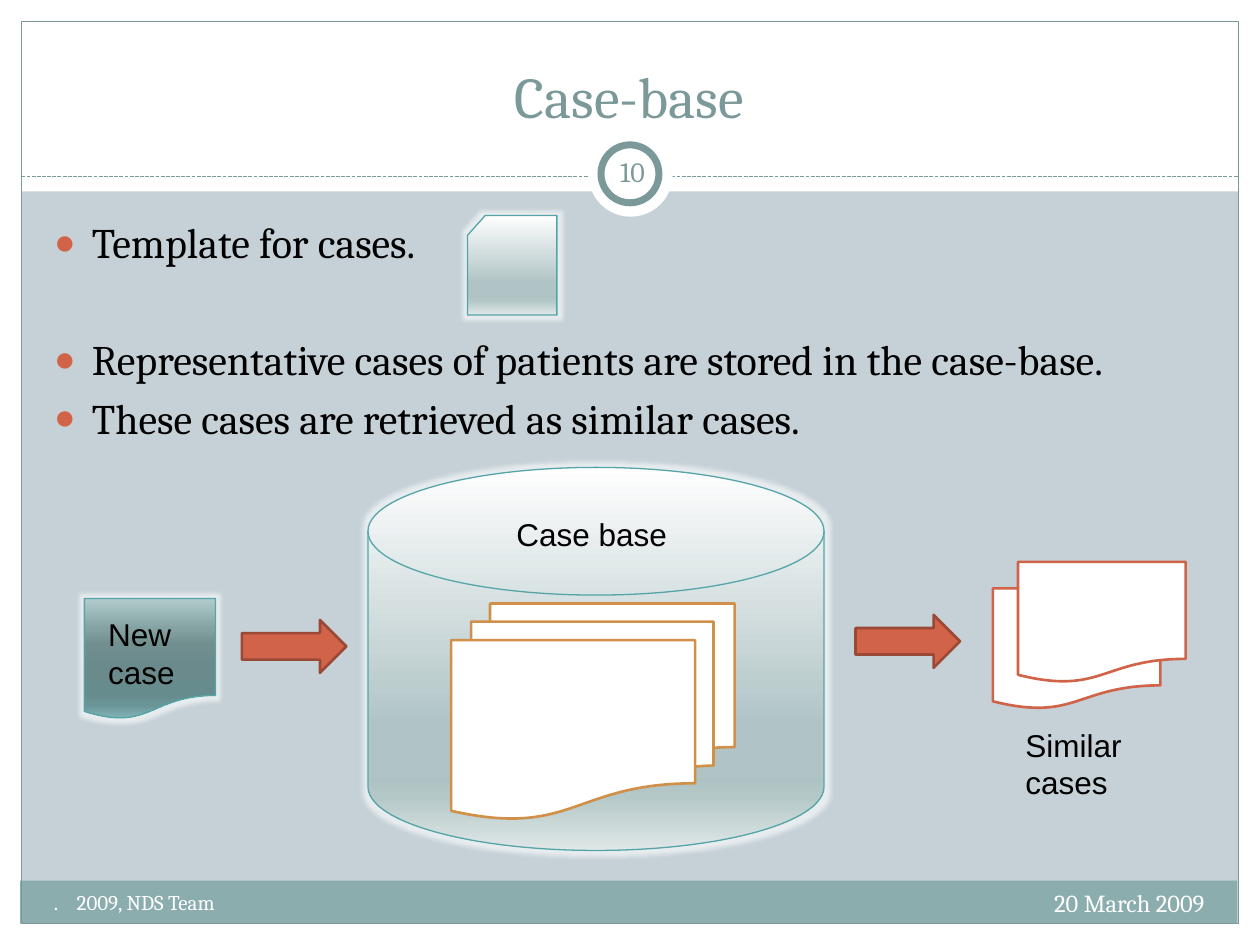
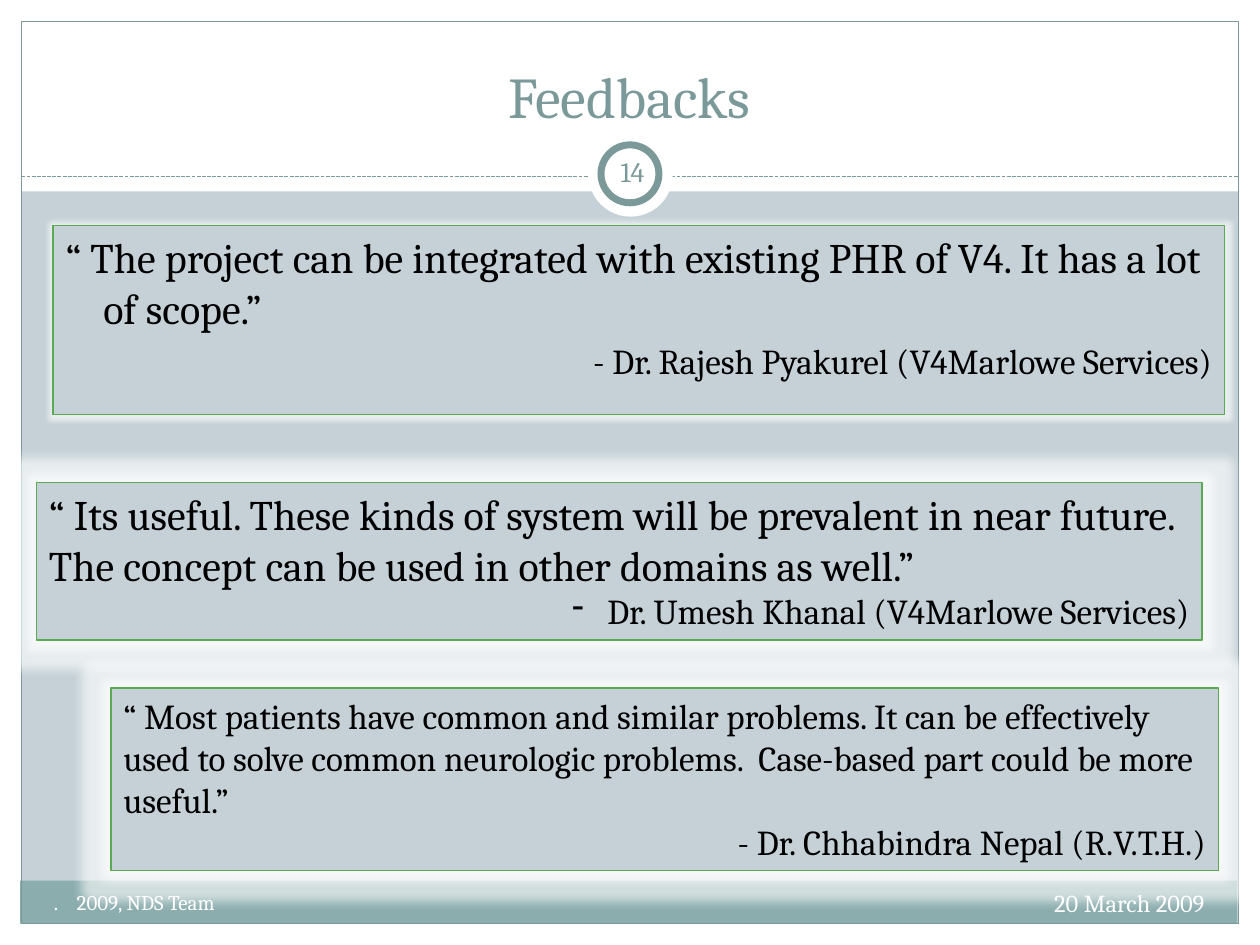
from lxml import etree
from pptx import Presentation
from pptx import util as u
from pptx.dml import color
from pptx.enum import dml, shapes, text
from pptx.oxml import ns

PX = u.Inches(1) // 100  # 100 px to the inch
START = (0, 0, PX, PX)  # every new shape is placed by style()
COLORS = {
    "white": "FFFFFF", "black": "000000", "ground": "C5D1D7", "band": "8CADAE",
    "slate": "7C999A", "rust": "D16349", "brown": "9B4936", "amber": "D19049",
    "teal": "55A4A7", "green": "5AAA53",
}
PALE = [(0, "FEFEFE"), (68, "B0C4C5"), (81, "ADC2C3"), (86, "B5C8C8"), (100, "DFE7E7")]
DARK = [(0, "B0CCCD"), (25, "85A2A2"), (38, "728F90"), (55, "6B8A8B"),
        (80, "678C8D"), (88, "6A9597"), (100, "84B6B8")]
KIND = shapes.MSO_SHAPE
ALIGN = text.PP_ALIGN
ANCHOR = text.MSO_ANCHOR


def style(shape, at, fill=None, line=None, width=0.75, glow=0):
    """Place a shape and set its fill (colour name or gradient stops), line and glow."""
    shape.left, shape.top, shape.width, shape.height = [v * PX for v in at]
    if isinstance(fill, list):
        shape.fill.gradient()
        shape.fill.gradient_angle = 270
        stops = shape.element.find(".//" + ns.qn("a:gsLst"))
        stops.clear()
        for percent, value in fill:
            stop = etree.SubElement(stops, ns.qn("a:gs"), pos=str(percent * 1000))
            etree.SubElement(stop, ns.qn("a:srgbClr"), val=value)
    elif fill:
        shape.fill.solid()
        shape.fill.fore_color.rgb = color.RGBColor.from_string(COLORS[fill])
    else:
        shape.fill.background()
    if line:
        shape.line.color.rgb = color.RGBColor.from_string(COLORS[line])
        shape.line.width = u.Pt(width)
    else:
        shape.line.fill.background()
    shape.shadow.inherit = False
    if glow:
        effects = shape.element.find(".//" + ns.qn("a:effectLst"))
        halo = etree.SubElement(effects, ns.qn("a:glow"), rad=str(u.Pt(glow)))
        tint = etree.SubElement(halo, ns.qn("a:srgbClr"), val=COLORS["white"])
        etree.SubElement(tint, ns.qn("a:alpha"), val="60000")
    return shape


def write(shape, words, size=18, ink="black", font="Cambria", align=ALIGN.LEFT,
          anchor=ANCHOR.TOP, wrap=True, margin=0, indent=0, before=None,
          bullet=None, bullet_ink=None):
    """Add one formatted paragraph to a shape."""
    frame = shape.text_frame
    frame.word_wrap, frame.vertical_anchor = wrap, anchor
    frame.auto_size = text.MSO_AUTO_SIZE.NONE
    para = frame.add_paragraph() if frame.text else frame.paragraphs[0]
    para.alignment = align
    if before is not None:
        para.space_before = u.Pt(before)
    span = para.add_run()
    span.text = words
    span.font.size, span.font.name = u.Pt(size), font
    span.font.color.rgb = color.RGBColor.from_string(COLORS[ink])
    props = para._p.get_or_add_pPr()
    props.set("marL", str(margin * PX))
    props.set("indent", str(indent * PX))
    if bullet_ink:
        tint = etree.SubElement(props, ns.qn("a:buClr"))
        etree.SubElement(tint, ns.qn("a:srgbClr"), val=COLORS[bullet_ink])
        etree.SubElement(props, ns.qn("a:buSzPct"), val="85000")
    if bullet:
        etree.SubElement(props, ns.qn("a:buChar"), char=bullet)
    else:
        etree.SubElement(props, ns.qn("a:buNone"))


deck = Presentation()
deck.slide_width, deck.slide_height = 1000 * PX, 750 * PX
layout = deck.slide_layouts[1]
layout.background.fill.solid()
layout.background.fill.fore_color.rgb = color.RGBColor.from_string(COLORS["ground"])
pages = [deck.slides.add_slide(layout) for _ in range(2)]
case_page, feedback_page = pages

# Shared bands, frame, rule and number ring, moved to the layout
drawn = case_page.shapes
decor = []
for at, fill, line in [
    ((0, 733, 1000, 17), "white", None),
    ((0, 0, 1000, 152), "white", None),
    ((0, 0, 17, 750), "white", None),
    ((983, 0, 17, 750), "white", None),
    ((16, 699, 966, 34), "band", None),
    ((17, 17, 966, 716), None, "slate"),
]:
    decor.append(style(drawn.add_shape(KIND.RECTANGLE, *START), at, fill, line))
rule = drawn.add_connector(shapes.MSO_CONNECTOR.STRAIGHT,
                           17 * PX, 140 * PX, 983 * PX, 140 * PX)
rule.line.color.rgb = color.RGBColor.from_string(COLORS["slate"])
rule.line.width = u.Pt(0.75)
rule.line.dash_style = dml.MSO_LINE.SQUARE_DOT
rule.line._ln.find(ns.qn("a:prstDash")).set("val", "sysDash")
etree.SubElement(rule.element.spPr, ns.qn("a:effectLst"))
decor.append(rule)
for at, line in [((467, 105, 67, 67), None), ((477, 115, 46, 46), "slate")]:
    decor.append(style(drawn.add_shape(KIND.OVAL, *START), at, "white", line, 4))
for shape in decor:
    layout.shapes.element.append(shape.element)

# Title, footer, date and number of each page
for page, title, number in zip(pages, ["Case-base", "Feedbacks"], ["10", "14"]):
    write(style(page.shapes.title, (33, 25, 933, 83)), title, size=33, ink="slate",
          align=ALIGN.CENTER, anchor=ANCHOR.BOTTOM)
    footer = style(page.shapes.add_textbox(*START), (33, 701, 392, 40))
    write(footer, ".\t2009, NDS Team", size=12, ink="white", margin=18, indent=-18)
    date = style(page.shapes.add_textbox(*START), (633, 700, 333, 40))
    write(date, "20 March 2009", size=14, ink="white", align=ALIGN.RIGHT)
    badge = style(page.shapes.add_textbox(*START), (477, 112, 50, 48))
    frame = badge.text_frame
    frame.margin_left = frame.margin_right = 5 * PX
    write(badge, number, size=16, ink="slate", align=ALIGN.CENTER, anchor=ANCHOR.MIDDLE)

# Case-base: list
body = style(case_page.placeholders[1], (33, 167, 946, 525))
for words, before in [
    ("Template for cases.", 4.8),
    ("Representative cases of patients are stored in the case-base.", 38),
    ("These cases are retrieved as similar cases.", 4.8),
]:
    write(body, words, size=24, margin=30, indent=-30, before=before,
          bullet="●", bullet_ink="rust")

# Case-base: from the new case through the case base to similar cases
for kind, at, fill, line, width, glow in [
    (KIND.FLOWCHART_MAGNETIC_DISK, (292, 371, 362, 304), PALE, "teal", 0.75, 5),
    (KIND.FLOWCHART_MULTIDOCUMENT, (358, 479, 225, 171), "white", "amber", 1.5, 0),
    (KIND.FLOWCHART_DOCUMENT, (67, 475, 104, 96), DARK, "teal", 0.75, 5),
    (KIND.FLOWCHART_DOCUMENT, (788, 467, 133, 96), "white", "rust", 1.5, 0),
    (KIND.FLOWCHART_DOCUMENT, (808, 446, 133, 96), "white", "rust", 1.5, 0),
    (KIND.RIGHT_ARROW, (192, 492, 83, 42), "rust", "brown", 1.5, 0),
    (KIND.RIGHT_ARROW, (679, 488, 83, 42), "rust", "brown", 1.5, 0),
    (KIND.FLOWCHART_CARD, (371, 171, 71, 79), PALE, "teal", 0.75, 5),
]:
    style(case_page.shapes.add_shape(kind, *START), at, fill, line, width, glow)
for lines, at in [
    (["Case base"], (400, 404, 141, 40)),
    (["New", "case"], (76, 483, 78, 71)),
    (["Similar", "cases"], (804, 571, 100, 71)),
]:
    label = style(case_page.shapes.add_textbox(*START), at)
    for words in lines:
        write(label, words, font="Arial", wrap=False)

# Feedbacks: three quotes, each with its speaker
first = feedback_page.placeholders[1]
second, third = [feedback_page.shapes.add_shape(KIND.RECTANGLE, *START) for _ in range(2)]
for box, at, glow, quote, quote_format, speaker, speaker_format in [
    (first, (42, 179, 930, 150), 5,
     "“ The project can be integrated with existing PHR of V4. It has a lot of scope.”",
     dict(size=24, margin=30, indent=-30, before=4.8),
     "- Dr. Rajesh Pyakurel (V4Marlowe Services)",
     dict(margin=60, indent=-30, before=4)),
    (second, (29, 383, 925, 125), 11,
     "“ Its useful. These kinds of system will be prevalent in near future. "
     "The concept can be used in other domains as well.”",
     dict(size=24),
     "Dr. Umesh Khanal (V4Marlowe Services)",
     dict(margin=50, indent=-28, bullet="-")),
    (third, (88, 546, 879, 145), 11,
     "“ Most patients have common and similar problems. It can be effectively used "
     "to solve common neurologic problems.  Case-based part could be more useful.”",
     dict(size=20),
     "- Dr. Chhabindra Nepal (R.V.T.H.)",
     dict(margin=50)),
]:
    style(box, at, "ground", "green", glow=glow)
    write(box, quote, **quote_format)
    write(box, speaker, size=20, align=ALIGN.RIGHT, **speaker_format)

deck.save("out.pptx")
